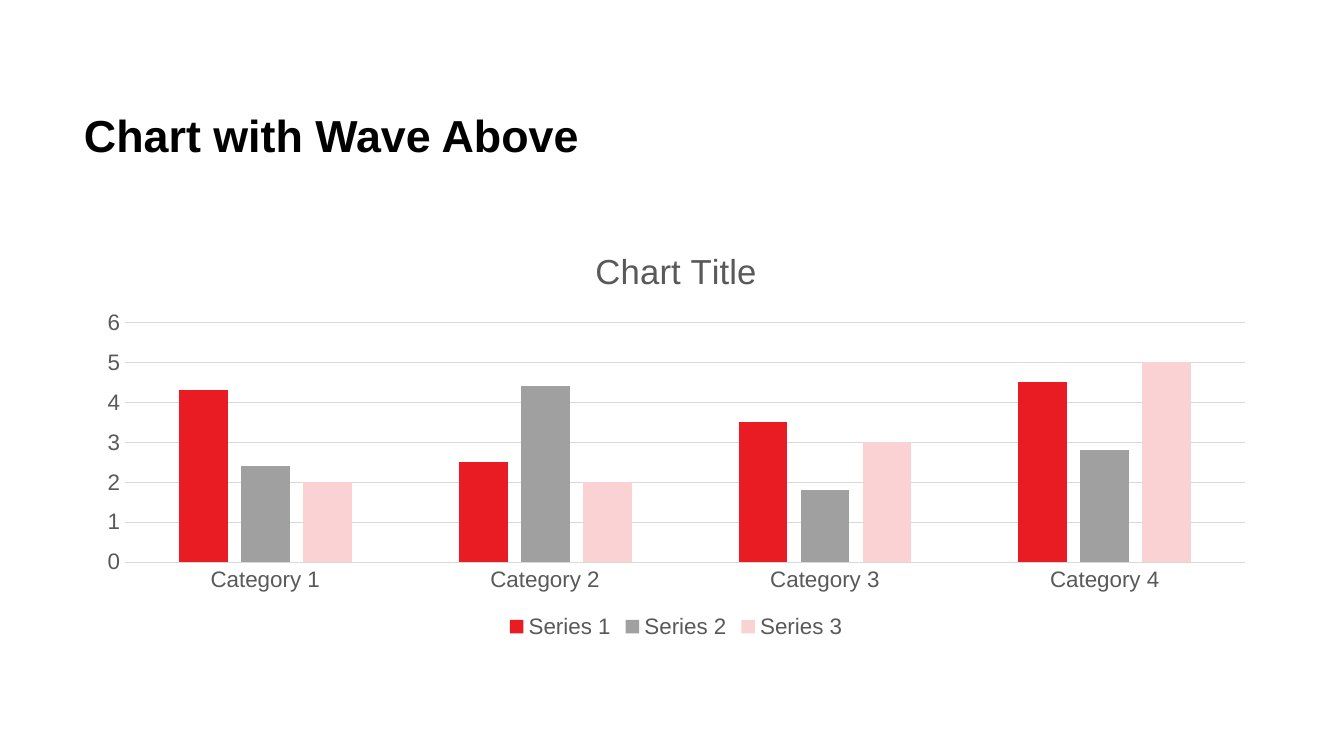
from lxml.etree import SubElement
from pptx import Presentation
from pptx.chart.data import CategoryChartData
from pptx.dml.color import RGBColor
from pptx.enum.chart import XL_CHART_TYPE as ChartType
from pptx.enum.chart import XL_LEGEND_POSITION as LegendPos
from pptx.enum.chart import XL_TICK_MARK as TickMark
from pptx.enum.text import MSO_ANCHOR as Anchor
from pptx.oxml.ns import qn
from pptx.util import Pt

# Content
HEADING = "Chart with Wave Above"
CHART_TITLE = "Chart Title"
CATEGORIES = ["Category 1", "Category 2", "Category 3", "Category 4"]
BLACK = RGBColor(0x00, 0x00, 0x00)
WHITE = RGBColor(0xFF, 0xFF, 0xFF)
LABEL_GRAY = RGBColor(0x59, 0x59, 0x59)
RULE_GRAY = RGBColor(0xD9, 0xD9, 0xD9)
RED = RGBColor(0xE9, 0x1C, 0x24)
GRAY = RGBColor(0xA0, 0xA0, 0xA0)
PINK = RGBColor(0xFB, 0xD2, 0xD3)
SERIES = [
    ("Series 1", (4.3, 2.5, 3.5, 4.5), RED),
    ("Series 2", (2.4, 4.4, 1.8, 2.8), GRAY),
    ("Series 3", (2, 2, 3, 5), PINK),
]

# Layout in px, 96 to the inch
EMU_PER_PX = 9525
SLIDE_SIZE = (960, 540)
HEADING_BOX = (60, 81, 846, 76)
CHART_BOX = (60, 162, 846, 298)
FONT = "Arial"


def emu(lengths):
    return [length * EMU_PER_PX for length in lengths]


def style_font(font, size, color, bold=False):
    font.name = FONT
    font.size = Pt(size)
    font.bold = bold
    font.color.rgb = color


def style_rule(line):
    line.color.rgb = RULE_GRAY
    line.width = Pt(0.75)


def add_heading(slide):
    frame = slide.shapes.add_textbox(*emu(HEADING_BOX)).text_frame
    frame.word_wrap = True
    frame.vertical_anchor = Anchor.TOP
    frame.margin_left = frame.margin_top = 0
    frame.margin_right = frame.margin_bottom = 0
    paragraph = frame.paragraphs[0]
    paragraph.line_spacing = 0.9
    run = paragraph.add_run()
    run.text = HEADING
    style_font(run.font, 24, BLACK, bold=True)


def add_column_chart(slide):
    columns = CategoryChartData()
    columns.categories = CATEGORIES
    for name, values, _ in SERIES:
        columns.add_series(name, values)
    chart = slide.shapes.add_chart(
        ChartType.COLUMN_CLUSTERED, *emu(CHART_BOX), columns).chart
    style_font(chart.font, 10, BLACK)

    # Title
    chart.has_title = True
    run = chart.chart_title.text_frame.paragraphs[0].add_run()
    run.text = CHART_TITLE
    style_font(run.font, 18.6, LABEL_GRAY)
    chart.chart_title.include_in_layout = False

    # Columns
    plot = chart.plots[0]
    plot.vary_by_categories = False
    plot.gap_width = 219
    plot.overlap = -27
    for series, (_, _, color) in zip(plot.series, SERIES):
        series.format.fill.solid()
        series.format.fill.fore_color.rgb = color
        series.invert_if_negative = False

    # Axes
    for axis in (chart.category_axis, chart.value_axis):
        axis.major_tick_mark = axis.minor_tick_mark = TickMark.NONE
        style_font(axis.tick_labels.font, 12, LABEL_GRAY)
    style_rule(chart.category_axis.format.line)
    scale = chart.value_axis
    scale.format.line.fill.background()
    scale.minimum_scale, scale.maximum_scale, scale.major_unit = 0, 6, 1
    scale.has_major_gridlines = True
    style_rule(scale.major_gridlines.format.line)

    # Legend
    chart.has_legend = True
    chart.legend.position = LegendPos.BOTTOM
    chart.legend.include_in_layout = False
    style_font(chart.legend.font, 12, LABEL_GRAY)


def main():
    deck = Presentation()
    deck.slide_width, deck.slide_height = emu(SLIDE_SIZE)
    slide = deck.slides.add_slide(deck.slide_layouts[6])
    slide.background.fill.solid()
    slide.background.fill.fore_color.rgb = WHITE
    add_heading(slide)
    add_column_chart(slide)
    deck.save("out.pptx")


if __name__ == "__main__":
    main()
